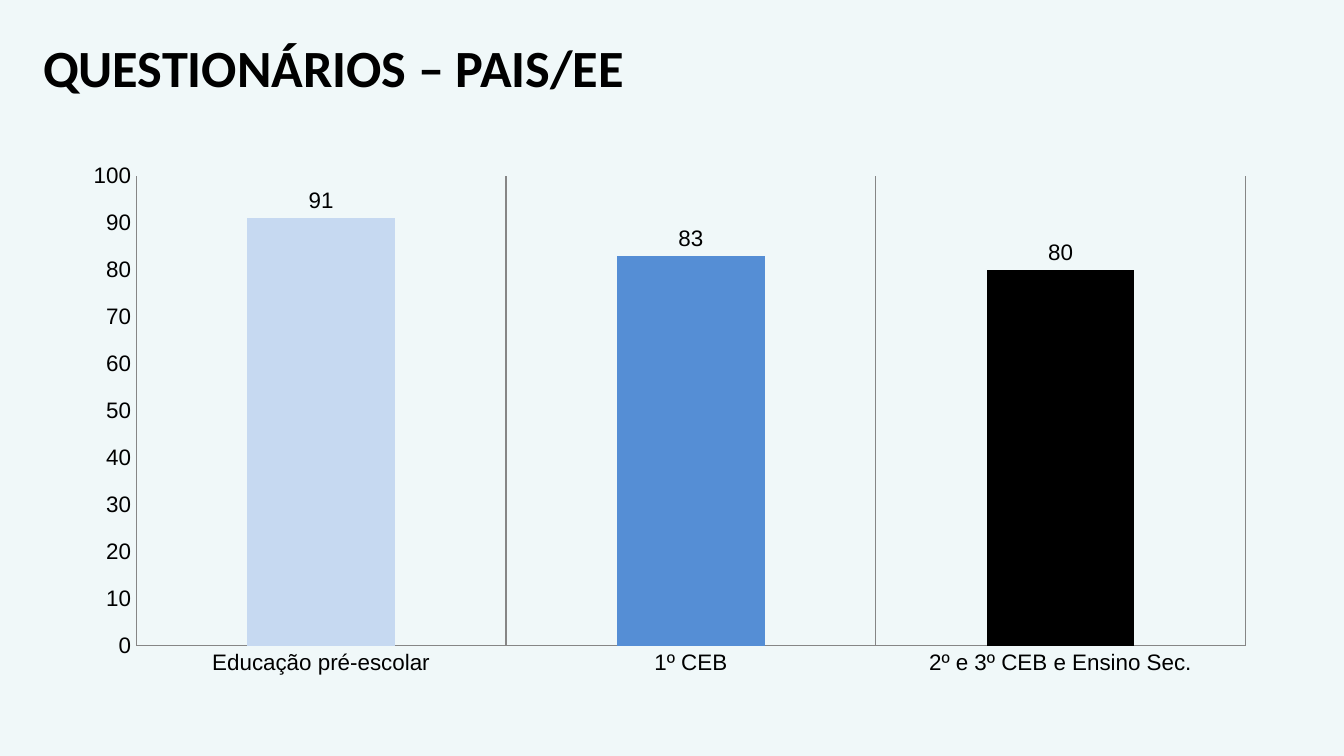
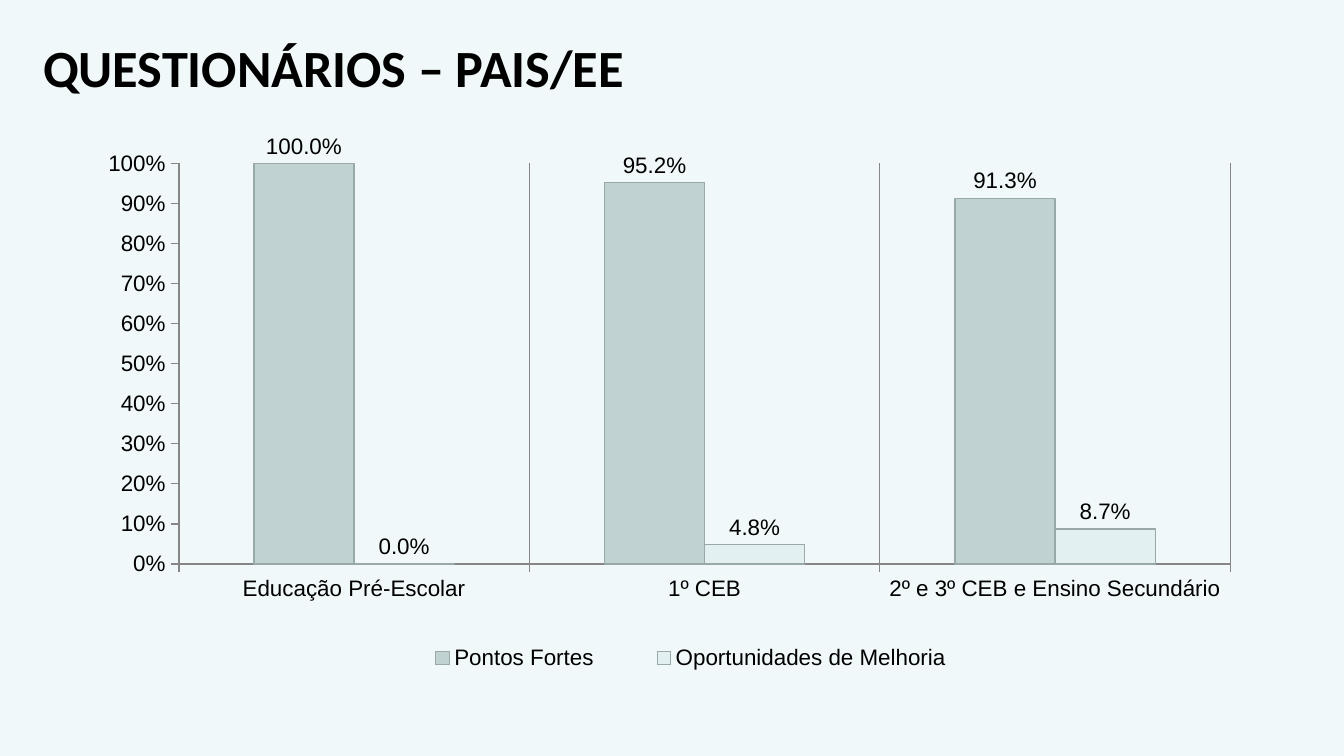
"""Builds two slides with column charts of the parents' questionnaire results."""
from lxml.etree import SubElement
from pptx import Presentation
from pptx.chart.data import CategoryChartData
from pptx.dml.color import RGBColor
from pptx.enum.chart import XL_CHART_TYPE as CT, XL_LABEL_POSITION as LP
from pptx.enum.chart import XL_LEGEND_POSITION as LGP, XL_TICK_MARK as TM
from pptx.enum.text import MSO_ANCHOR, PP_ALIGN
from pptx.oxml.ns import qn
from pptx.util import Cm, Pt

COLORS = {
    "bg": "F0F8F9", "text": "000000", "axis": "868686", "edge": "99A9A9",
    "preschool": "C6D9F1", "primary": "558ED5", "secondary": "000000",
    "strengths": "C1D2D2", "improvements": "E2F0F1",
}


def rgb(name):
    return RGBColor.from_string(COLORS[name])


def add_slide(prs, title):
    s = prs.slides.add_slide(prs.slide_layouts[5])
    s.background.fill.solid()
    s.background.fill.fore_color.rgb = rgb("bg")
    sp = s.shapes.title
    sp.left, sp.top, sp.width, sp.height = Cm(-0.71), Cm(0.53), Cm(24), Cm(2.39)
    tf = sp.text_frame
    tf.word_wrap = True
    tf.vertical_anchor = MSO_ANCHOR.TOP
    p = tf.paragraphs[0]
    p.alignment = PP_ALIGN.LEFT
    p._p.get_or_add_pPr().set("marL", str(Cm(1.27)))
    r = p.add_run()
    r.text = title
    r.font.name, r.font.size, r.font.bold = "Calibri", Pt(28), True
    r.font.color.rgb = rgb("text")
    return s


def set_layout(parent, index, box, inner=False):
    for old in parent.findall(qn("c:layout")):
        parent.remove(old)
    layout = SubElement(parent, qn("c:layout"))
    parent.insert(index, layout)
    manual = SubElement(layout, qn("c:manualLayout"))
    items = [("layoutTarget", "inner")] if inner else []
    items += [("xMode", "edge"), ("yMode", "edge"), *zip("xywh", box)]
    for tag, val in items:
        SubElement(manual, qn(f"c:{tag}")).set("val", str(val))


def format_axis(axis, tick):
    axis.major_tick_mark, axis.minor_tick_mark = tick, TM.NONE
    axis.format.line.color.rgb = rgb("axis")
    axis.format.line.width = Pt(0.75)


def add_columns(s, size, cats, series, top, fmt, label_fmt, tick, plot):
    data = CategoryChartData()
    data.categories = cats
    for name, vals in series:
        data.add_series(name, vals)
    chart = s.shapes.add_chart(CT.COLUMN_CLUSTERED, Cm(1.3), Cm(2.54), *size, data).chart
    chart.has_title = chart.has_legend = False
    chart.font.name, chart.font.size = "Arial", Pt(12)
    chart.font.color.rgb = rgb("text")

    cat, val = chart.category_axis, chart.value_axis
    for axis in (cat, val):
        format_axis(axis, tick)
    cat.has_major_gridlines, val.has_major_gridlines = True, False
    cat.major_gridlines.format.line.color.rgb = rgb("axis")
    cat.major_gridlines.format.line.width = Pt(0.75)
    val.minimum_scale, val.maximum_scale, val.major_unit = 0, top, top / 10
    val.tick_labels.number_format = fmt
    val.tick_labels.number_format_is_linked = False

    bars = chart.plots[0]
    bars.vary_by_categories = False
    bars.gap_width = 150
    for ser in bars.series:
        labels = ser.data_labels
        labels.show_value, labels.position = True, LP.OUTSIDE_END
        labels.number_format, labels.number_format_is_linked = label_fmt, False
    set_layout(chart._chartSpace.chart.plotArea, 0, plot, inner=True)
    return chart


def fill_bar(bar, color):
    bar.format.fill.solid()
    bar.format.fill.fore_color.rgb = rgb(color)


def add_legend(chart, box):
    chart.has_legend = True
    chart.legend.position = LGP.BOTTOM
    chart.legend.include_in_layout = False
    set_layout(chart.legend._element, 1, box)


def add_overall_slide(prs, title):
    chart = add_columns(
        add_slide(prs, title), (Cm(22.81), Cm(11)),
        ["Educação pré-escolar", "1º CEB", "2º e 3º CEB e Ensino Sec."],
        [("Series 1", (91, 83, 80))],
        100, "0", "0", TM.NONE, (0.056, 0.072, 0.919, 0.807))
    chart.plots[0].overlap = 40
    ser = chart.plots[0].series[0]
    for i, color in enumerate(("preschool", "primary", "secondary")):
        fill_bar(ser.points[i], color)


def add_balance_slide(prs, title):
    chart = add_columns(
        add_slide(prs, title), (Cm(22.61), Cm(10.59)),
        ["Educação Pré-Escolar", "1º CEB", "2º e 3º CEB e Ensino Secundário"],
        [("Pontos Fortes", (1, 0.952, 0.913)),
         ("Oportunidades de Melhoria", (0, 0.048, 0.087))],
        1, "0%", "0.0%", TM.OUTSIDE, (0.092, 0.052, 0.879, 0.715))
    for ser, color in zip(chart.plots[0].series, ("strengths", "improvements")):
        fill_bar(ser, color)
        ser.format.line.color.rgb = rgb("edge")
        ser.format.line.width = Pt(0.75)
    add_legend(chart, (0.26, 0.89, 0.52, 0.09))


def main():
    prs = Presentation()
    prs.slide_width, prs.slide_height = Cm(25.4), Cm(14.29)
    title = "QUESTIONÁRIOS – PAIS/EE"
    add_overall_slide(prs, title)
    add_balance_slide(prs, title)
    prs.save("out.pptx")


if __name__ == "__main__":
    main()
